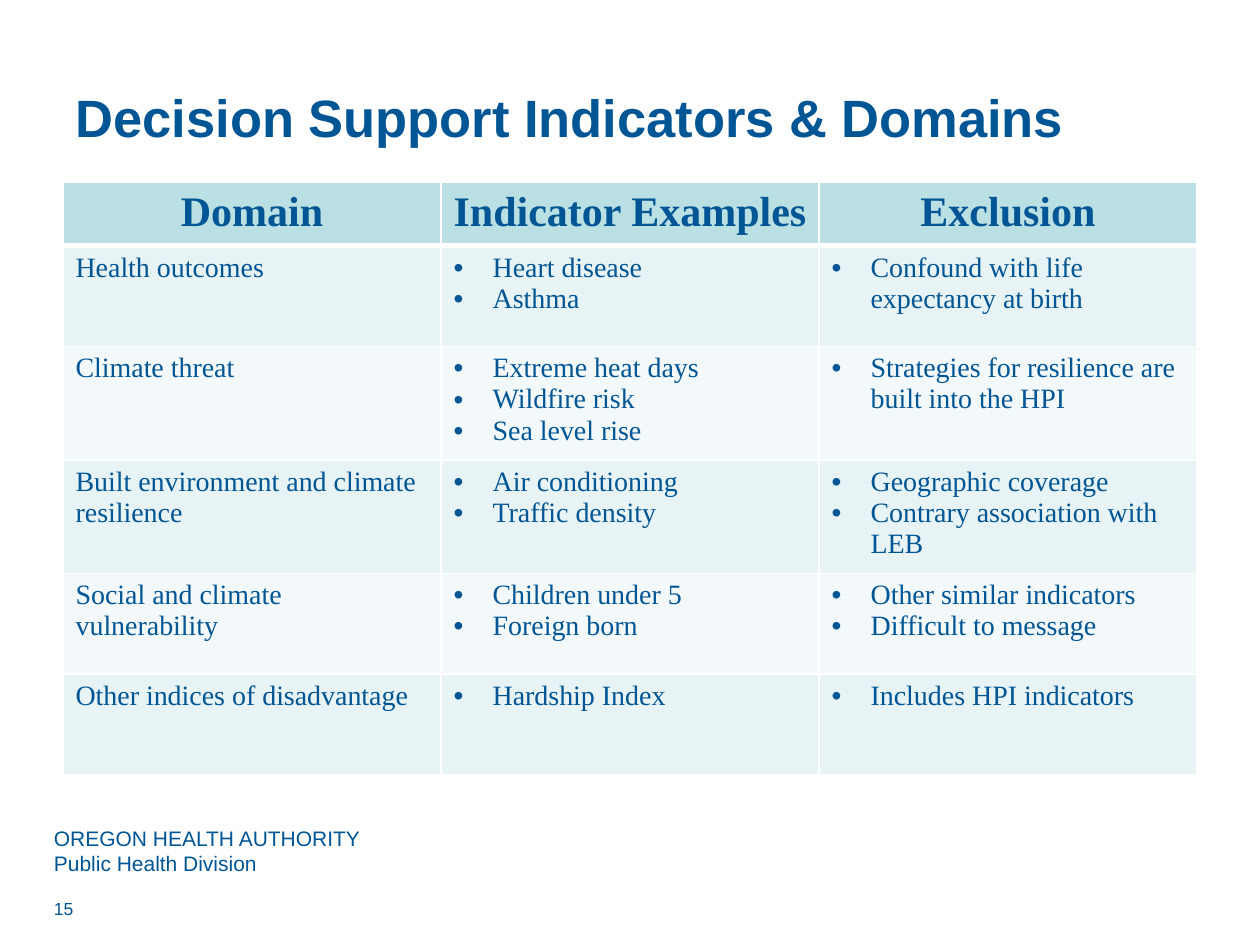
"""Build the slide of decision support indicators and domains."""
from dataclasses import dataclass

from lxml import etree
from pptx import Presentation
from pptx import util as u
from pptx.dml import color
from pptx.enum import text
from pptx.oxml import ns

BLUE, WHITE, TEAL = "005595", "FFFFFF", "BBE0E3"
BANDS = ("E7F3F4", "F3F9FA")
SANS, SERIF = "Arial", "Times New Roman"
HEADS = ("Domain", "Indicator Examples", "Exclusion")


@dataclass
class Row:
    domain: str
    signs: list[str]
    limits: list[str]


@dataclass
class Note:
    left: float
    top: float
    width: float
    height: float
    words: str
    size: int


ROWS = [
    Row("Health outcomes", ["Heart disease", "Asthma"],
        ["Confound with life expectancy at birth"]),
    Row("Climate threat",
        ["Extreme heat days", "Wildfire risk", "Sea level rise"],
        ["Strategies for resilience are built into the HPI"]),
    Row("Built environment and climate resilience",
        ["Air conditioning", "Traffic density"],
        ["Geographic coverage", "Contrary association with LEB"]),
    Row("Social and climate vulnerability",
        ["Children under 5", "Foreign born"],
        ["Other similar indicators", "Difficult to message"]),
    Row("Other indices of disadvantage", ["Hardship Index"],
        ["Includes HPI indicators"]),
]
NOTES = [
    Note(0.33, 6.5, 3.83, 0.52,
         "OREGON HEALTH AUTHORITY\vPublic Health Division", 12),
    Note(0.33, 7.08, 2.33, 0.27, "15", 10),
]


def rgb(code: str) -> color.RGBColor:
    return color.RGBColor.from_string(code)


def place(shape, left: float, top: float, width: float, height: float) -> None:
    shape.left, shape.top = u.Inches(left), u.Inches(top)
    shape.width, shape.height = u.Inches(width), u.Inches(height)


def style(para, face: str, size: int, bold: bool = False) -> None:
    for run in para.runs:
        font = run.font
        font.name, font.size, font.bold = face, u.Pt(size), bold
        font.color.rgb = rgb(BLUE)
    for gap in para._p.findall(ns.qn("a:br")):
        etree.SubElement(gap, ns.qn("a:rPr")).set("sz", str(size * 100))


def bullet(para) -> None:
    props = para._p.get_or_add_pPr()
    dent = u.Inches(0.31)
    props.set("marL", str(dent))
    props.set("indent", str(-dent))
    etree.SubElement(props, ns.qn("a:buFont")).set("typeface", SANS)
    etree.SubElement(props, ns.qn("a:buChar")).set("char", "•")


def border(cell, top: int, base: int) -> None:
    props = cell._tc.get_or_add_tcPr()
    for side, width in (("L", 1), ("R", 1), ("T", top), ("B", base)):
        line = etree.SubElement(props, ns.qn(f"a:ln{side}"), w=str(u.Pt(width)))
        fill = etree.SubElement(line, ns.qn("a:solidFill"))
        etree.SubElement(fill, ns.qn("a:srgbClr"), val=WHITE)


def paint(cell, code: str, top: int = 1, base: int = 1) -> None:
    border(cell, top, base)
    cell.fill.solid()
    cell.fill.fore_color.rgb = rgb(code)


def add_title(slide, words: str) -> None:
    title = slide.shapes.title
    place(title, 0.5, 0.3, 9, 1.25)
    frame = title.text_frame
    frame.text = words
    frame.vertical_anchor = text.MSO_ANCHOR.MIDDLE
    frame.paragraphs[0].alignment = text.PP_ALIGN.LEFT
    style(frame.paragraphs[0], SANS, 30, True)


def add_note(slide, note: Note) -> None:
    box = slide.shapes.add_textbox(0, 0, 0, 0)
    place(box, note.left, note.top, note.width, note.height)
    box.text_frame.word_wrap = True
    para = box.text_frame.paragraphs[0]
    para.text = note.words
    style(para, SANS, note.size)


def add_grid(slide) -> None:
    size = [u.Inches(n) for n in (0.5, 1.45, 9, 4.49)]
    grid = slide.shapes.add_table(len(ROWS) + 1, len(HEADS), *size).table
    for at, line in enumerate(grid.rows):
        line.height = u.Inches(0.8 if at else 0.49)
    for col, head in enumerate(HEADS):
        cell = grid.cell(0, col)
        paint(cell, TEAL, base=3)
        para = cell.text_frame.paragraphs[0]
        para.text = head
        para.alignment = text.PP_ALIGN.CENTER
        style(para, SERIF, 24, True)
    for at, row in enumerate(ROWS, 1):
        for col, items in enumerate(([row.domain], row.signs, row.limits)):
            cell = grid.cell(at, col)
            paint(cell, BANDS[(at - 1) % 2], top=3 if at == 1 else 1)
            cell.text_frame.text = "\n".join(items)
            for para in cell.text_frame.paragraphs:
                if col:
                    bullet(para)
                style(para, SERIF, 16)


def main() -> None:
    deck = Presentation()
    deck.slide_width, deck.slide_height = u.Inches(10), u.Inches(7.5)
    slide = deck.slides.add_slide(deck.slide_layouts[5])
    for note in NOTES:
        add_note(slide, note)
    add_title(slide, "Decision Support Indicators & Domains")
    add_grid(slide)
    deck.save("out.pptx")


if __name__ == "__main__":
    main()
